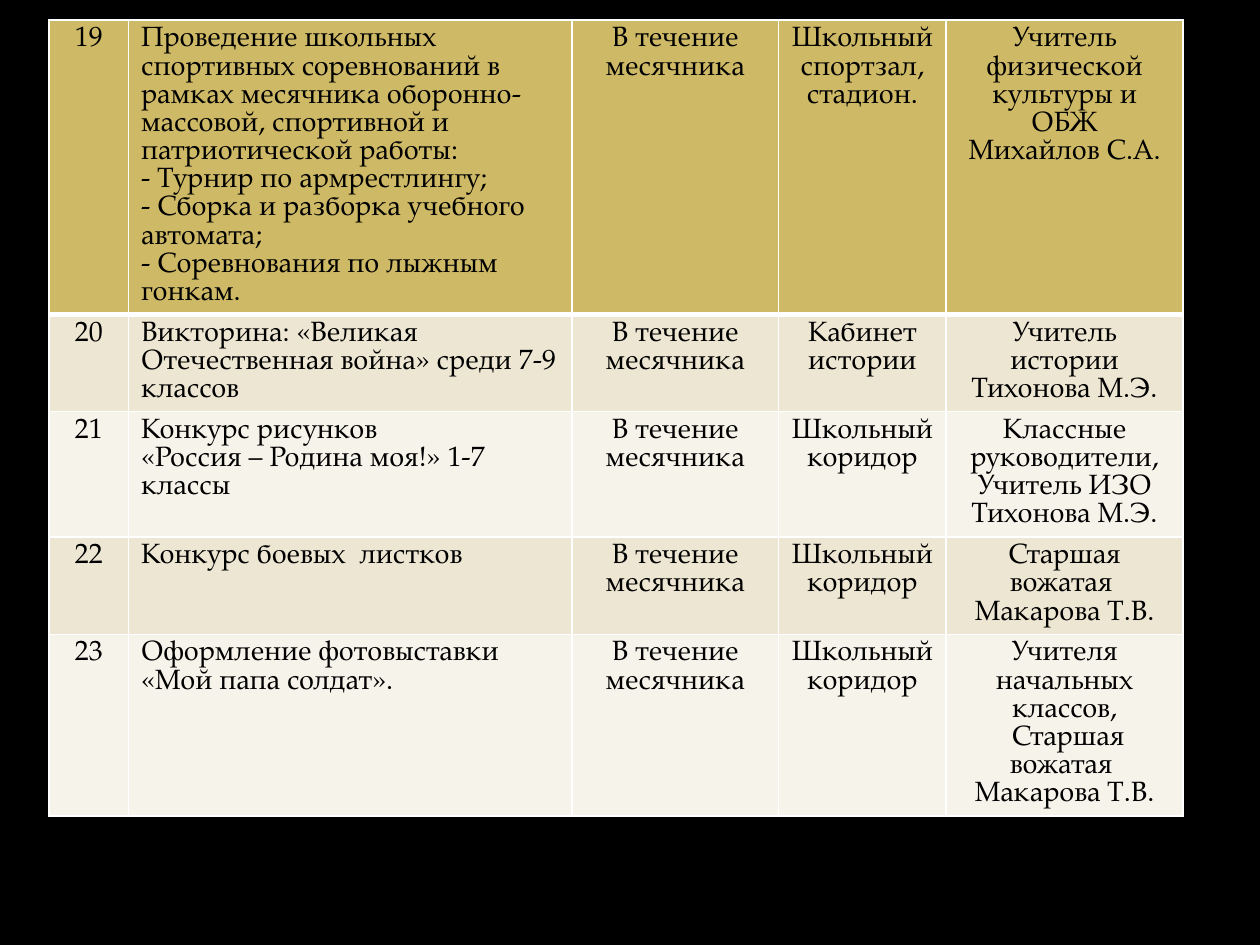
from lxml import etree
from pptx import Presentation
from pptx.dml.color import RGBColor
from pptx.enum.text import PP_ALIGN
from pptx.oxml.ns import qn
from pptx.util import Inches, Pt

LEFT, CENTER = PP_ALIGN.LEFT, PP_ALIGN.CENTER
BLACK = RGBColor(0x00, 0x00, 0x00)
WHITE = RGBColor(0xFF, 0xFF, 0xFF)
GOLD = RGBColor(0xCE, 0xB9, 0x66)
SAND = RGBColor(0xED, 0xE6, 0xD3)
CREAM = RGBColor(0xF6, 0xF3, 0xEA)
FONT = "TeX Gyre Pagella"

WIDTHS = [0.63, 3.52, 1.64, 1.33, 1.88]
ROW_HEIGHT = 0.41
FIRST = 19
TERM = "В течение месячника"
HALL = "Школьный коридор"

# Event, place and person in charge; a line break starts a new paragraph
EVENTS = [
    ("Проведение школьных спортивных соревнований в рамках месячника "
     "оборонно-массовой, спортивной и патриотической работы:\n"
     "- Турнир по армрестлингу;\n"
     "- Сборка и разборка учебного автомата;\n"
     "- Соревнования по лыжным гонкам.",
     "Школьный спортзал, стадион.",
     "Учитель физической культуры и ОБЖ\nМихайлов С.А."),
    ("Викторина: «Великая Отечественная война» среди 7-9 классов",
     "Кабинет истории",
     "Учитель истории Тихонова М.Э."),
    ("Конкурс рисунков\n«Россия – Родина моя!» 1-7 классы",
     HALL,
     "Классные руководители,\nУчитель ИЗО Тихонова М.Э."),
    ("Конкурс боевых  листков",
     HALL,
     "Старшая вожатая \nМакарова Т.В."),
    ("Оформление фотовыставки\n«Мой папа солдат».",
     HALL,
     "Учителя начальных классов,\n Старшая вожатая \nМакарова Т.В."),
]


def write(frame, text, size=16, pitch=16.1, color=BLACK, align=LEFT):
    for i, line in enumerate(text.split("\n")):
        para = frame.paragraphs[0] if i == 0 else frame.add_paragraph()
        para.alignment = align
        para.line_spacing = Pt(pitch)
        run = para.add_run()
        run.text = line
        run.font.name = FONT
        run.font.size = Pt(size)
        run.font.color.rgb = color


def set_border(cell, side, width):
    props = cell._tc.get_or_add_tcPr()
    line = etree.SubElement(props, qn(f"a:ln{side}"), w=str(Pt(width)))
    fill = etree.SubElement(line, qn("a:solidFill"))
    etree.SubElement(fill, qn("a:srgbClr"), val=str(WHITE))


def style_cell(cell, row):
    """Draw the borders before the fill, as the schema orders them."""
    widths = {"L": 1, "R": 1, "T": 3 if row == 1 else 1, "B": 3 if row == 0 else 1}
    for side, width in widths.items():
        set_border(cell, side, width)
    cell.fill.solid()
    cell.fill.fore_color.rgb = GOLD if row == 0 else (CREAM, SAND)[row % 2]


def add_plan(slide, left, top, width, height):
    frame = slide.shapes.add_table(len(EVENTS), len(WIDTHS), left, top, width, height)
    table = frame.table
    for col, size in zip(table.columns, WIDTHS):
        col.width = Inches(size)
    for r, (event, place, person) in enumerate(EVENTS):
        table.rows[r].height = Inches(ROW_HEIGHT)
        texts = [str(FIRST + r), event, TERM, place, person]
        for c, text in enumerate(texts):
            cell = table.cell(r, c)
            style_cell(cell, r)
            write(cell.text_frame, text, align=LEFT if c == 1 else CENTER)
    frame.width, frame.height = width, height


def main():
    deck = Presentation()
    deck.slide_width, deck.slide_height = Inches(10), Inches(7.5)
    slide = deck.slides.add_slide(deck.slide_layouts[6])
    slide.background.fill.solid()
    slide.background.fill.fore_color.rgb = BLACK
    add_plan(slide, Inches(0.39), Inches(0.16), Inches(8.98), Inches(7.17))
    deck.save("out.pptx")


if __name__ == "__main__":
    main()
